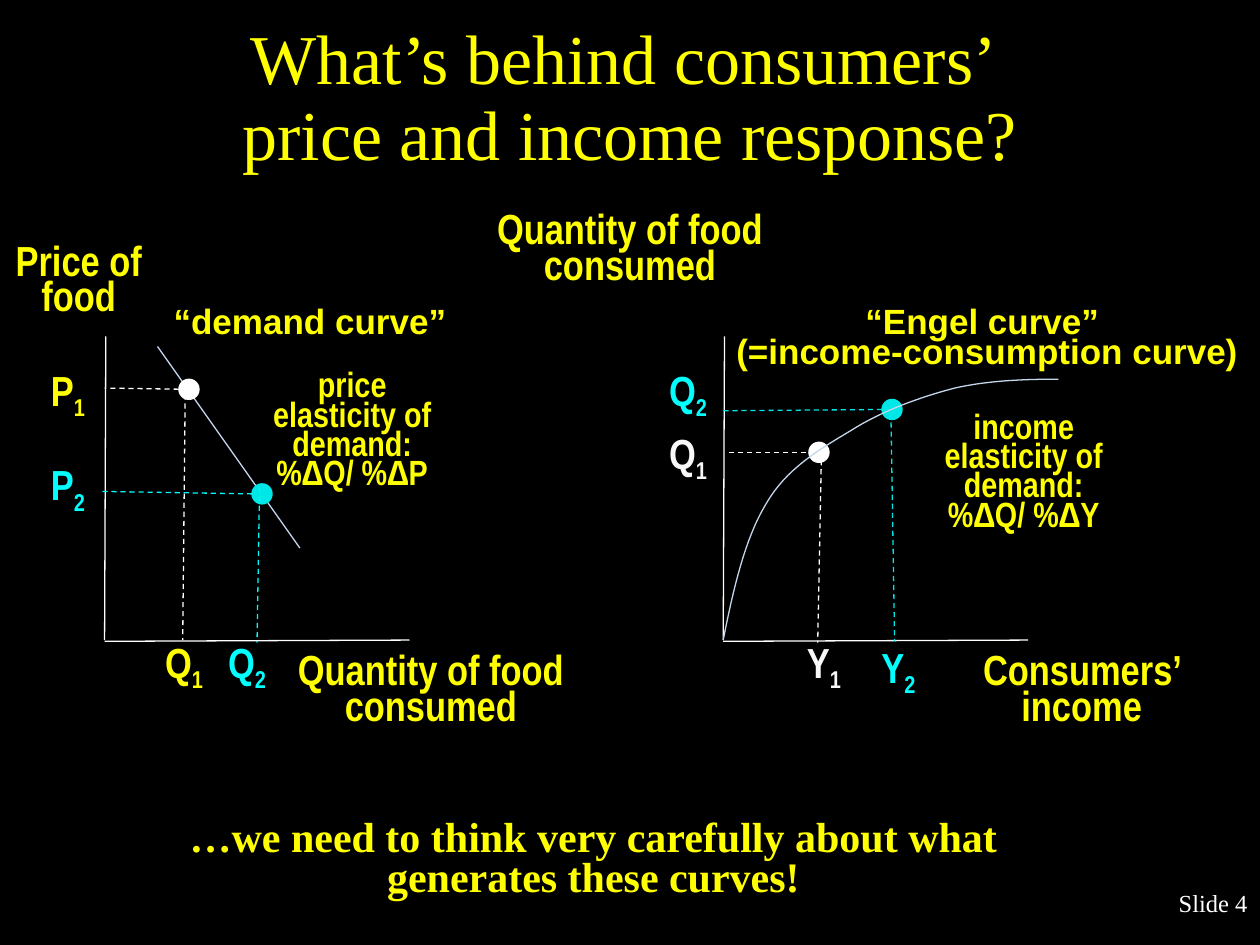
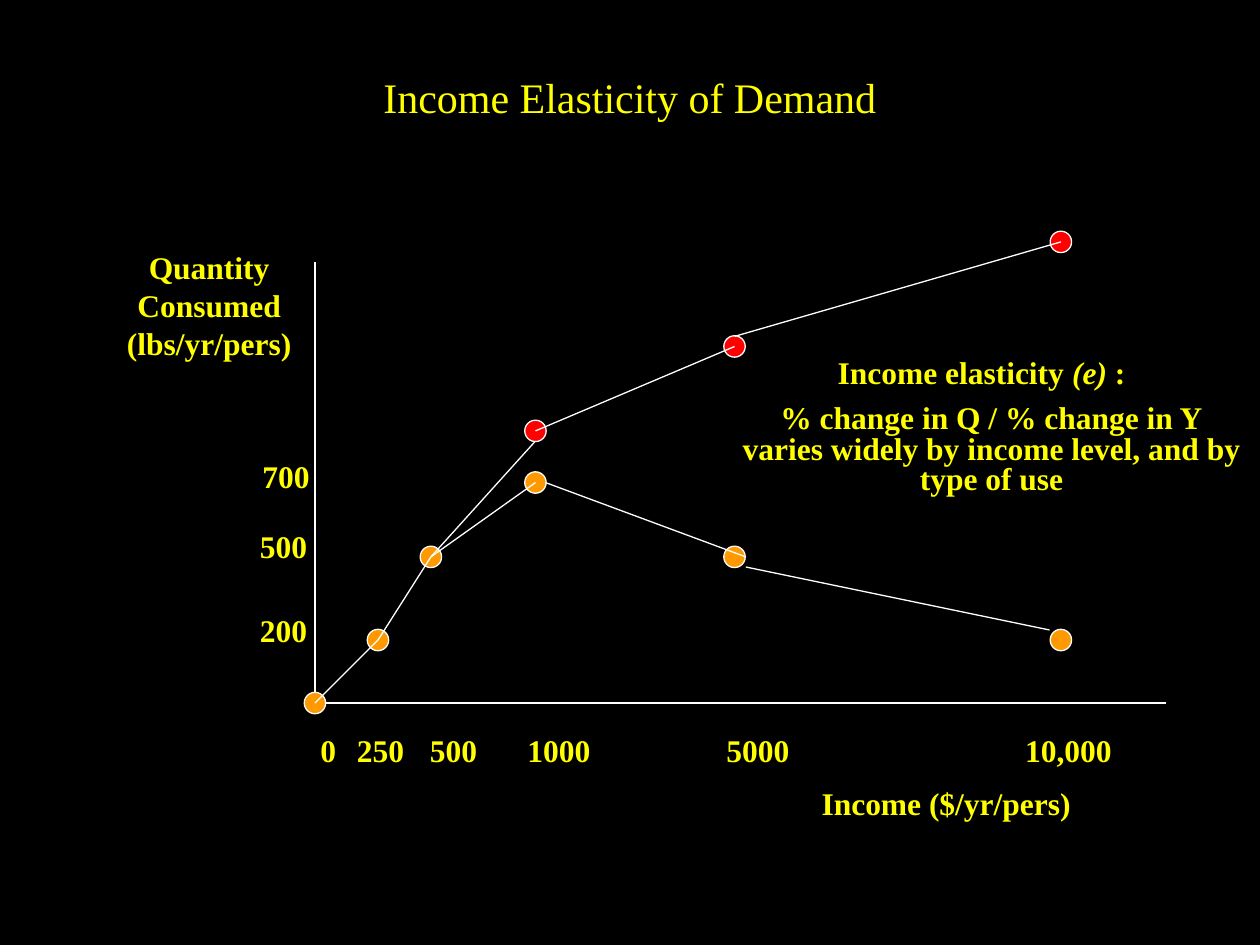
from lxml import etree
from pptx import Presentation
from pptx.dml.color import RGBColor
from pptx.enum.dml import MSO_LINE
from pptx.enum.shapes import MSO_CONNECTOR, MSO_SHAPE
from pptx.enum.text import MSO_ANCHOR, MSO_AUTO_SIZE, PP_ALIGN
from pptx.oxml.ns import qn
from pptx.util import Inches, Pt

DASH = MSO_LINE.DASH
STRAIGHT = MSO_CONNECTOR.STRAIGHT
OVAL = MSO_SHAPE.OVAL
MIDDLE, TOP = MSO_ANCHOR.MIDDLE, MSO_ANCHOR.TOP
FIT, FIXED = MSO_AUTO_SIZE.SHAPE_TO_FIT_TEXT, MSO_AUTO_SIZE.NONE
CENTER, RIGHT = PP_ALIGN.CENTER, PP_ALIGN.RIGHT

BLACK = RGBColor(0x00, 0x00, 0x00)
WHITE = RGBColor(0xFF, 0xFF, 0xFF)
OFF_WHITE = RGBColor(0xF8, 0xF8, 0xF8)
YELLOW = RGBColor(0xFF, 0xFF, 0x00)
CYAN = RGBColor(0x00, 0xFF, 0xFF)
TEAL = RGBColor(0x00, 0xE7, 0xE7)
AQUA = RGBColor(0x00, 0xF9, 0xF9)
PALE_BLUE = RGBColor(0xC4, 0xD6, 0xEB)
ORANGE = RGBColor(0xFF, 0x99, 0x00)
RED = RGBColor(0xFF, 0x00, 0x00)

SERIF, SANS, NARROW = "Times New Roman", "Arial", "Arial Narrow"
DOT = 0.17
LINE_WIDTH = Pt(0.75)


class Region:
    def __init__(self, slide, x=0, y=0):
        self.slide, self.x, self.y = slide, x, y

    def point(self, x, y):
        return Inches(self.x + x), Inches(self.y + y)

    def text(self, box, paragraphs, size, font=SERIF, color=YELLOW, bold=True,
             spacing=None, align=CENTER, anchor=TOP, fit=FIT, wrap=True):
        x, y, w, h = box
        sp = self.slide.shapes.add_textbox(*self.point(x, y), Inches(w), Inches(h))
        tf = sp.text_frame
        tf.word_wrap = wrap
        tf.auto_size = fit
        tf.vertical_anchor = anchor
        for i, runs in enumerate(paragraphs):
            p = tf.paragraphs[0] if i == 0 else tf.add_paragraph()
            p.alignment = align
            p.line_spacing = spacing
            for content, style in [(runs, "")] if isinstance(runs, str) else runs:
                if style == "break":
                    p.add_line_break()
                r = p.add_run()
                r.text = content
                r.font.name = font
                r.font.size = Pt(size)
                r.font.bold = bold
                r.font.color.rgb = color
                if style == "italic":
                    r.font.italic = True
                if style == "sub":
                    r._r.get_or_add_rPr().set("baseline", "-25000")

    def line(self, x1, y1, x2, y2, color=WHITE, dash=None):
        s = self.slide.shapes.add_connector(
            STRAIGHT, *self.point(x1, y1), *self.point(x2, y2))
        s.line.color.rgb = color
        s.line.width = LINE_WIDTH
        if dash:
            s.line.dash_style = dash
        etree.SubElement(s._element.spPr, qn("a:effectLst"))

    def dot(self, x, y, color, outline=None):
        sp = self.slide.shapes.add_shape(
            OVAL, *self.point(x - DOT / 2, y - DOT / 2), Inches(DOT), Inches(DOT))
        sp.shadow.inherit = False
        sp.fill.solid()
        sp.fill.fore_color.rgb = color
        if outline:
            sp.line.color.rgb = outline
            sp.line.width = LINE_WIDTH
        else:
            sp.line.fill.background()

    def curve(self, start, beziers, color, steps=16):
        builder = self.slide.shapes.build_freeform(*self.point(*start), scale=1)
        points = []
        for x1, y1, x2, y2, x3, y3 in beziers:
            for n in range(1, steps + 1):
                t = n / steps
                u = 1 - t
                weights = (u ** 3, 3 * u * u * t, 3 * u * t * t, t ** 3)
                points.append(self.point(
                    sum(k * v for k, v in zip(weights, (start[0], x1, x2, x3))),
                    sum(k * v for k, v in zip(weights, (start[1], y1, y2, y3)))))
            start = x3, y3
        builder.add_line_segments(points, close=False)
        sp = builder.convert_to_shape()
        sp.shadow.inherit = False
        sp.fill.background()
        sp.line.color.rgb = color
        sp.line.width = LINE_WIDTH

    def axis_title(self, x, y, w, content):
        self.text((x, y, w, 0.67), [content], 24, NARROW, spacing=0.7)

    def tick(self, x, y, letter, index, color):
        self.text((x, y, 0.58, 0.39), [[(letter, ""), (index, "sub")]],
                  24, NARROW, color, spacing=0.7)

    def panel_axes(self):
        self.line(0.01, 0, 0, 2.41)
        self.line(2.42, 2.41, 0, 2.42)

    def guides(self, guides):
        for *ends, color in guides:
            self.line(*ends, color, DASH)

    def ticks(self, ticks):
        for tick in ticks:
            self.tick(*tick)


def title(slide, box, runs, size, spacing=None):
    Region(slide).text(box, [runs], size, bold=False, spacing=spacing,
                       anchor=MIDDLE, fit=FIXED)


def demand_panel(slide, x, y):
    g = Region(slide, x, y)
    g.panel_axes()
    g.axis_title(-0.83, -0.75, 1.25, "Price of food")
    g.axis_title(1.34, 2.5, 2.5, "Quantity of food consumed")
    g.line(0.42, 0.08, 1.55, 1.68, PALE_BLUE)
    g.dot(0.67, 0.42, WHITE)
    g.dot(1.25, 1.25, TEAL)
    g.guides([(0.66, 0.42, 0, 0.41, WHITE),
              (1.17, 1.25, -0.03, 1.23, AQUA),
              (1.23, 1.2, 1.21, 2.43, AQUA),
              (0.64, 0.46, 0.62, 2.41, WHITE)])
    g.ticks([(-0.58, 0.25, "P", "1", YELLOW), (-0.58, 1, "P", "2", CYAN),
             (0.34, 2.41, "Q", "1", YELLOW), (0.84, 2.41, "Q", "2", CYAN)])
    g.text((0.34, -0.25, 2.58, 0.34), ["“demand curve”"], 20, SANS, spacing=0.7)
    g.text((1.09, 0.25, 1.75, 0.81),
           ["price elasticity of demand:", "%∆Q/ %∆P"], 20, NARROW, spacing=0.7)


def engel_panel(slide, x, y):
    g = Region(slide, x, y)
    g.panel_axes()
    g.axis_title(1.68, 2.5, 2.33, "Consumers’ income")
    g.axis_title(-1.99, -1, 2.5, "Quantity of food consumed")
    g.dot(1.34, 0.58, TEAL)
    g.dot(0.76, 0.92, WHITE)
    g.guides([(1.26, 0.58, 0, 0.59, TEAL),
              (0.73, 0.92, 0.04, 0.92, WHITE),
              (0.78, 0.91, 0.75, 2.43, WHITE),
              (1.33, 0.54, 1.36, 2.42, TEAL)])
    g.ticks([(-0.57, 0.25, "Q", "2", CYAN), (-0.57, 0.75, "Q", "1", OFF_WHITE),
             (0.51, 2.41, "Y", "1", OFF_WHITE), (1.1, 2.45, "Y", "2", CYAN)])
    g.curve((0, 2.41), [(0.08, 2.01, 0.17, 1.61, 0.34, 1.33),
                        (0.5, 1.05, 0.76, 0.9, 1.01, 0.75),
                        (1.26, 0.59, 1.57, 0.48, 1.84, 0.41),
                        (2.11, 0.35, 2.39, 0.34, 2.66, 0.34)], PALE_BLUE)
    g.text((-0.07, -0.25, 4.33, 0.57),
           ["“Engel curve” ", "(=income-consumption curve)"], 20, SANS, spacing=0.7)
    g.text((1.51, 0.58, 1.75, 1.04),
           ["income elasticity of demand:", "%∆Q/ %∆Y"], 20, NARROW, spacing=0.7)


def elasticity_plot(slide, x, y):
    g = Region(slide, x, y)
    g.line(0.08, 3.5, 6.75, 3.5)
    g.line(0, 3.5, 0, 0)
    g.text((-1.6, -0.16, 1.52, 1.01),
           ["Quantity", "Consumed", "(lbs/yr/pers)"], 18, wrap=False)
    g.text((3.91, 4.09, 2.2, 0.4), ["Income ($/yr/pers)"], 18, wrap=False)

    falling = [(0, 3.5), (0.5, 3), (0.92, 2.34), (1.75, 1.75), (3.33, 2.34), (5.92, 3)]
    rising = [(1.75, 1.34), (3.33, 0.67), (5.92, -0.16)]
    for points, color in ((falling, ORANGE), (rising, RED)):
        for px, py in points:
            g.dot(px, py, color, WHITE)

    incomes = [("0", -0.06, 0.33), ("250", 0.23, 0.58), ("500", 0.81, 0.58),
               ("1000", 1.58, 0.71), ("5000", 3.16, 0.71), ("10,000", 5.53, 0.9)]
    for label, left, width in incomes:
        g.text((left, 3.67, width, 0.4), [label], 18, wrap=False)
    quantities = [("200", -0.54, 2.72), ("500", -0.54, 2.05), ("700", -0.52, 1.5)]
    for label, left, top in quantities:
        g.text((left, top, 0.58, 0.4), [label], 18, wrap=False)

    segments = [(0, 3.5, 0.5, 3), (0.5, 3, 0.92, 2.34),
                (0.92, 2.34, 1.75, 1.75), (1.83, 1.75, 3.42, 2.34),
                (3.42, 2.42, 5.83, 2.92), (0.92, 2.34, 1.75, 1.42),
                (1.75, 1.34, 3.33, 0.67), (3.33, 0.59, 5.92, -0.16)]
    for segment in segments:
        g.line(*segment)


def elasticity_note(slide, x, y):
    g = Region(slide, x, y)
    g.text((0, 0, 4.92, 0.4),
           [[("Income elasticity ", ""), ("(e)", "italic"), (" :", "")]], 18)
    g.text((0.25, 0.42, 4.58, 0.83),
           ["% change in Q / % change in Y",
            "varies widely by income level, and by type of use"], 18, spacing=0.8)


def response_slide(slide):
    title(slide, (0, 0.33, 10, 0.92),
          [("What’s behind consumers’ ", ""), ("price and income response?", "break")],
          40, 0.9)
    g = Region(slide)
    g.text((7.92, 7, 2.08, 0.5), ["Slide 4"], 14, color=WHITE, bold=False,
           align=RIGHT, fit=FIXED)
    demand_panel(slide, 0.83, 2.67)
    engel_panel(slide, 5.74, 2.67)
    g.text((1.25, 6.58, 6.92, 0.5),
           ["…we need to think very carefully about what generates these curves!"],
           24, spacing=0.8, anchor=MIDDLE, fit=FIXED)


def elasticity_slide(slide):
    elasticity_plot(slide, 2.5, 2.08)
    elasticity_note(slide, 5.33, 2.75)
    title(slide, (0.75, 0.33, 8.5, 0.88), "Income Elasticity of Demand", 24)


def main():
    prs = Presentation()
    prs.slide_width, prs.slide_height = Inches(10), Inches(7.5)
    fill = prs.slide_master.background.fill
    fill.solid()
    fill.fore_color.rgb = BLACK
    for build in (response_slide, elasticity_slide):
        build(prs.slides.add_slide(prs.slide_layouts[6]))
    prs.save("out.pptx")


if __name__ == "__main__":
    main()
